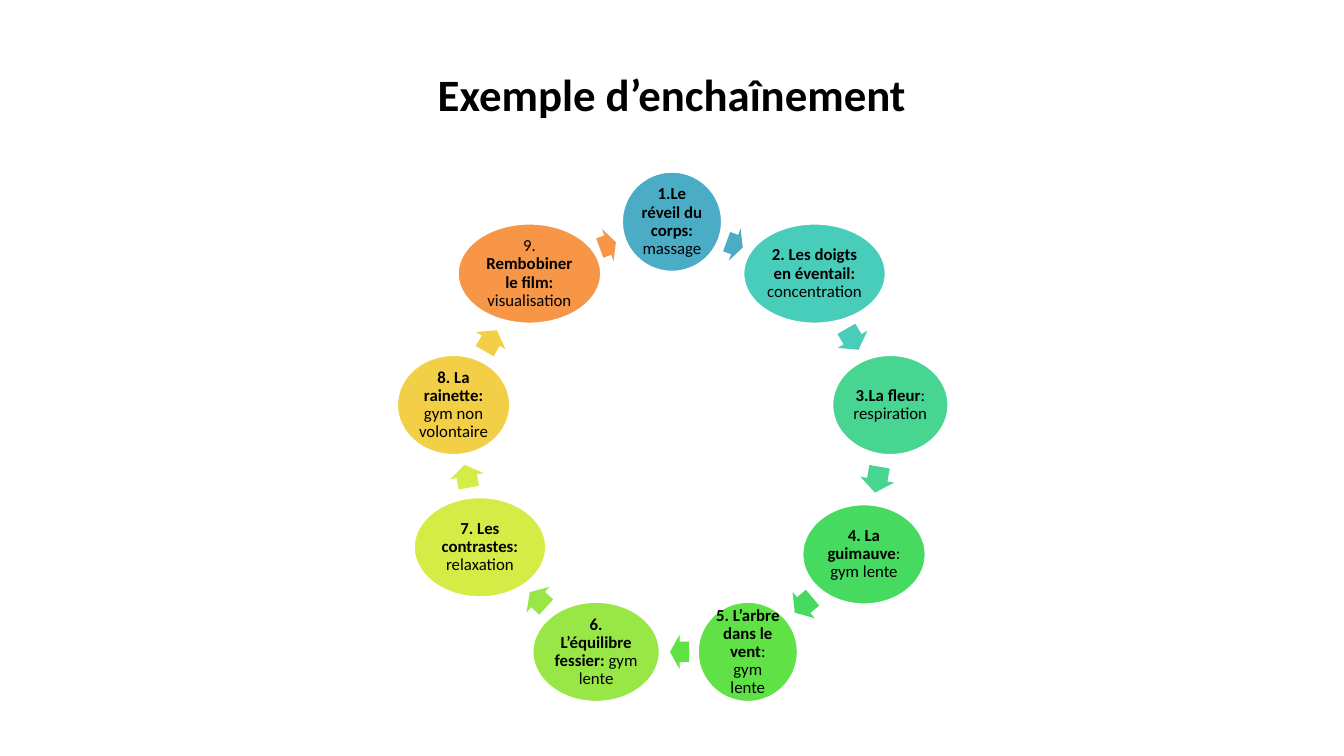
"""Build the slide showing a cycle of nine relaxation exercises."""
import math
from dataclasses import dataclass

from pptx import Presentation, util as u
from pptx.dml.color import RGBColor
from pptx.enum import shapes, text


@dataclass(frozen=True)
class Theme:
    font: str = "Calibri"
    ink: str = "000000"
    outline: str = "FFFFFF"
    title_size: int = 32
    step_size: int = 12
    outline_width: int = 2


@dataclass(frozen=True)
class Run:
    words: str
    bold: bool = False


@dataclass(frozen=True)
class Step:
    runs: tuple[Run, ...]
    colour: str
    columns: float
    arrow_columns: float
    arrow_share: float = 0.5
    lift: float = 0


@dataclass(frozen=True)
class Point:
    column: float
    row: float


THEME = Theme()
COLUMNS, ROWS = 133.33, 75
CENTRE = Point(COLUMNS / 2, 44)
RADIUS = 22
STEP_ROWS = 10
ARROW_ROWS = 3.4
INSET = 0.2

STEPS = (
    Step((Run("1.Le réveil du corps: ", True), Run("massage")), "4BACC6", 10, 1.7, 0.44),
    Step((Run("2. Les doigts en éventail: ", True), Run("concentration")), "49CDBB", 14.2, 2.4),
    Step((Run("3.La fleur", True), Run(": respiration")), "48D491", 11.6, 2.6),
    Step((Run("4. La guimauve", True), Run(": gym lente")), "47DA61", 12.3, 2.3, 0.52),
    Step((Run("5. L’arbre dans le vent", True), Run(": gym lente")), "60E146", 10, 1.9, 0.45),
    Step((Run("6. L’équilibre fessier: ", True), Run("gym lente")), "98E746", 12.7, 2.2),
    Step((Run("7. Les contrastes: ", True), Run("relaxation")), "D5EC46", 13.2, 2.3, lift=0.7),
    Step((Run("8. La rainette: ", True), Run("gym non volontaire")), "F2CF46", 11.3, 2.4, 0.49),
    Step((Run("9. "), Run("Rembobiner le film: ", True), Run("visualisation")),
         "F79646", 14.3, 1.7, 0.55),
)


def cells(count: float) -> int:
    """Turn a number of grid cells, ten to the inch, into a length."""
    return u.Inches(count / 10)


def box(middle: Point, columns: float, rows: float) -> tuple[int, ...]:
    """Give the frame of an element centred on a grid point."""
    return tuple(map(cells, (middle.column - columns / 2, middle.row - rows / 2, columns, rows)))


def step_centre(index: int) -> Point:
    """Place a step on the circle, clockwise from the top."""
    angle = math.tau * index / len(STEPS)
    return Point(CENTRE.column + RADIUS * math.sin(angle),
                 CENTRE.row - RADIUS * math.cos(angle) - STEPS[index].lift)


def write(frame, runs: tuple[Run, ...], size: int, spacing: float, inset: float) -> None:
    """Fill a text frame with one centred paragraph."""
    frame.word_wrap = True
    frame.vertical_anchor = text.MSO_ANCHOR.MIDDLE
    frame.margin_left = frame.margin_right = cells(inset)
    frame.margin_top = frame.margin_bottom = cells(inset)
    paragraph = frame.paragraphs[0]
    paragraph.alignment = text.PP_ALIGN.CENTER
    paragraph.line_spacing = spacing
    for part in runs:
        run = paragraph.add_run()
        run.text = part.words
        run.font.name = THEME.font
        run.font.size = u.Pt(size)
        run.font.bold = part.bold
        run.font.color.rgb = RGBColor.from_string(THEME.ink)


def add_filled(slide, kind, frame: tuple[int, ...], colour: str):
    """Add a flat shape in one colour."""
    shape = slide.shapes.add_shape(kind, *frame)
    shape.shadow.inherit = False
    shape.fill.solid()
    shape.fill.fore_color.rgb = RGBColor.from_string(colour)
    return shape


def draw_step(slide, step: Step, middle: Point) -> None:
    """Draw the ellipse of a step with its wording."""
    bubble = add_filled(slide, shapes.MSO_SHAPE.OVAL,
                        box(middle, step.columns, STEP_ROWS), step.colour)
    bubble.line.color.rgb = RGBColor.from_string(THEME.outline)
    bubble.line.width = u.Pt(THEME.outline_width)
    write(bubble.text_frame, step.runs, THEME.step_size, 0.9, INSET)


def draw_arrow(slide, step: Step, start: Point, end: Point) -> None:
    """Draw the arrow leading from a step to the next one."""
    across, down = end.column - start.column, end.row - start.row
    middle = Point(start.column + across * step.arrow_share,
                   start.row + down * step.arrow_share)
    arrow = add_filled(slide, shapes.MSO_SHAPE.RIGHT_ARROW,
                       box(middle, step.arrow_columns, ARROW_ROWS), step.colour)
    arrow.line.fill.background()
    arrow.adjustments[0] = 0.6
    arrow.adjustments[1] = 0.5
    arrow.rotation = math.degrees(math.atan2(down, across)) % 360


def main() -> None:
    """Compose and save the slide."""
    deck = Presentation()
    deck.slide_width, deck.slide_height = cells(COLUMNS), cells(ROWS)
    slide = deck.slides.add_slide(deck.slide_layouts[6])
    heading = slide.shapes.add_textbox(*box(Point(CENTRE.column, 9.25), 120, 12.5))
    write(heading.text_frame, (Run("Exemple d’enchaînement", True),), THEME.title_size, 1.0, 0.5)
    centres = [step_centre(index) for index in range(len(STEPS))]
    for step, start, end in zip(STEPS, centres, centres[1:] + centres[:1]):
        draw_step(slide, step, start)
        draw_arrow(slide, step, start, end)
    deck.save("out.pptx")


if __name__ == "__main__":
    main()
